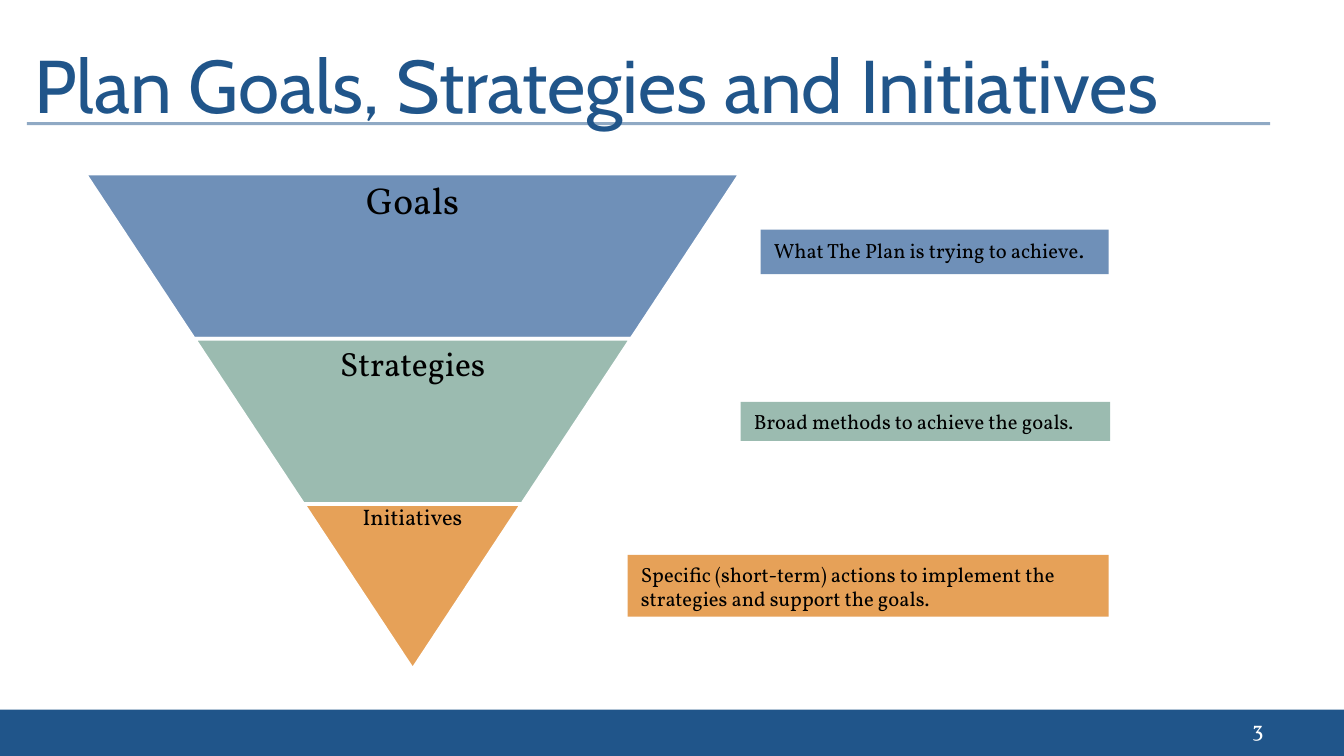
from lxml import etree
from pptx import Presentation
from pptx import util as u
from pptx.dml.color import RGBColor
from pptx.enum import shapes, text
from pptx.oxml import ns

LEVELS = [
    ("Goals", "6F90B8", {"size": 20, "inset": 0.03}, 0.65),
    ("Strategies", "9BBBB0", {"size": 18, "inset": 0.03}, 0.65),
    ("Initiatives", "E6A158", {"size": 12, "inset": 0.02, "line_spacing": 0.9}, 1),
]
CALLOUTS = [
    ((5.66, 1.71, 2.59, 0.33), "6F90B8",
     [("What The Plan is trying to achieve", 11), (".", 12)]),
    ((5.51, 2.99, 2.75, 0.29), "9BBBB0",
     [("Broad methods to achieve the goals.", 11)]),
    ((4.67, 4.13, 3.58, 0.46), "E6A158",
     [("Specific (short-term) actions to implement the "
       "strategies and support the goals.", 11)]),
]


def color(value):
    """Turn a hex string into a colour."""
    return RGBColor.from_string(value)


def set_values(target, values):
    """Set attributes of an object from a dict."""
    for name, value in values.items():
        setattr(target, name, value)


def write_text(shape, runs, ink="000000", font="Vollkorn", inset=None,
               anchor=text.MSO_ANCHOR.TOP, **paragraph_values):
    """Write one paragraph of (wording, size) runs into a shape."""
    frame = shape.text_frame
    set_values(frame, {"word_wrap": True, "vertical_anchor": anchor})
    if inset is not None:
        sides = ("left", "right", "top", "bottom")
        set_values(frame, {f"margin_{side}": u.Inches(inset) for side in sides})
    paragraph = frame.paragraphs[0]
    set_values(paragraph, {"alignment": text.PP_ALIGN.LEFT, **paragraph_values})
    for wording, size in runs:
        run = paragraph.add_run()
        run.text = wording
        set_values(run.font, {"name": font, "size": u.Pt(size)})
        run.font.color.rgb = color(ink)


def add_label(slide, box, wording, size, **values):
    """Add a text box with one run."""
    label = slide.shapes.add_textbox(*map(u.Inches, box))
    write_text(label, [(wording, size)], **values)


def add_block(slide, kind, box, fill, outline=None):
    """Add a flat filled shape with an optional outline."""
    shape = slide.shapes.add_shape(kind, *map(u.Inches, box))
    shape.shadow.inherit = False
    shape.fill.solid()
    shape.fill.fore_color.rgb = color(fill)
    if outline:
        shape.line.color.rgb = color(outline)
        shape.line.width = u.Pt(2)
    else:
        shape.line.fill.background()
    return shape


def add_rule(slide, start, end, ink, width, opacity):
    """Add a straight, partly transparent line."""
    rule = slide.shapes.add_connector(
        shapes.MSO_CONNECTOR.STRAIGHT, *map(u.Inches, start + end))
    rule.line.color.rgb = color(ink)
    rule.line.width = u.Pt(width)
    properties = rule._element.spPr
    tint = properties.find(".//" + ns.qn("a:srgbClr"))
    etree.SubElement(tint, ns.qn("a:alpha"), val=str(opacity * 1000))
    etree.SubElement(properties, ns.qn("a:effectLst"))


def add_pyramid(slide, center, top, width, step):
    """Stack the levels as an inverted pyramid."""
    for index, (wording, fill, values, share) in enumerate(LEVELS):
        band_width = width * (len(LEVELS) - index) / len(LEVELS)
        band_top = top + index * step
        band = add_block(
            slide, shapes.MSO_SHAPE.TRAPEZOID,
            (center - band_width / 2, band_top, band_width, step), fill, "FFFFFF")
        set_values(band, {"rotation": 180})
        band.adjustments[0] = 0.66
        label_width = band_width * share
        add_label(slide, (center - label_width / 2, band_top, label_width, step),
                  wording, alignment=text.PP_ALIGN.CENTER, **values)


def main():
    """Build and save the slide."""
    presentation = Presentation()
    set_values(presentation, {"slide_width": u.Inches(10),
                              "slide_height": u.Inches(10 * 9 / 16)})
    slide = presentation.slides.add_slide(presentation.slide_layouts[6])
    add_block(slide, shapes.MSO_SHAPE.RECTANGLE, (-0.01, 5.28, 10.01, 0.35), "20558A")
    add_rule(slide, (0.2, 0.92), (9.45, 0.92), "20558A", 1.5, 50)
    add_label(slide, (7.17, 5.27, 2.33, 0.3), "3", 12, ink="FFFFFF",
              anchor=text.MSO_ANCHOR.MIDDLE, alignment=text.PP_ALIGN.RIGHT)
    add_label(slide, (0.16, 0.24, 9.07, 0.67),
              "Plan Goals, Strategies and Initiatives", 40, ink="20558A", font="Cabin")
    add_pyramid(slide, center=3.07, top=1.29, width=4.88, step=1.23)
    for box, fill, runs in CALLOUTS:
        callout = add_block(slide, shapes.MSO_SHAPE.RECTANGLE, box, fill)
        write_text(callout, runs)
    presentation.save("out.pptx")


if __name__ == "__main__":
    main()
